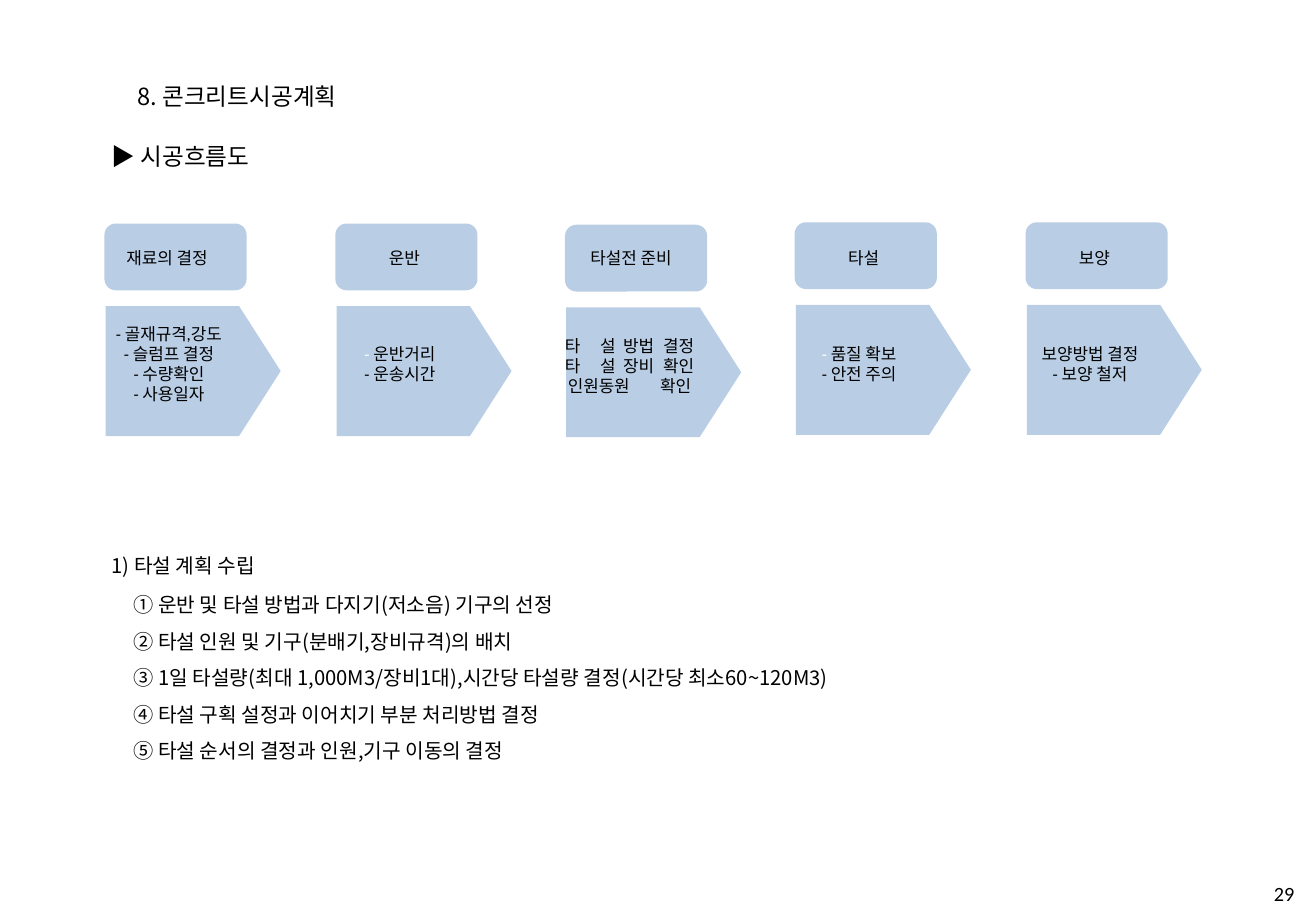
from lxml.etree import SubElement
from pptx import Presentation
from pptx.dml.color import RGBColor
from pptx.enum.shapes import MSO_SHAPE
from pptx.enum.text import MSO_ANCHOR, MSO_AUTO_SIZE, PP_ALIGN
from pptx.oxml.ns import qn
from pptx.util import Emu, Pt

PX = 9144  # 100 px to the inch
BLACK = RGBColor(0x00, 0x00, 0x00)
WHITE = RGBColor(0xFF, 0xFF, 0xFF)
PALE_BLUE = RGBColor(0xB9, 0xCD, 0xE5)
LATIN, KOREAN = "Calibri", "Noto Sans CJK KR"


def add_run(paragraph, text, size, font=LATIN, color=BLACK):
    run = paragraph.add_run()
    run.text = text
    run.font.size = Pt(size)
    run.font.color.rgb = color
    run.font.name = font
    SubElement(run.font._element, qn("a:ea"), typeface=KOREAN)


def add_frame(left, top, width, height, inset=True):
    frame = slide.shapes.add_textbox(*(Emu(v * PX) for v in (left, top, width, height))).text_frame
    frame.word_wrap = False
    if not inset:
        frame.margin_left = frame.margin_top = frame.margin_right = frame.margin_bottom = 0
    return frame


presentation = Presentation()
presentation.slide_width, presentation.slide_height = Emu(1083 * PX), Emu(750 * PX)
slide = presentation.slides.add_slide(presentation.slide_layouts[5])

# Title
title = slide.shapes.title
title.left, title.top, title.width, title.height = (Emu(v * PX) for v in (103, 62, 198, 34))
title.text_frame.word_wrap = False
title.text_frame.auto_size = MSO_AUTO_SIZE.SHAPE_TO_FIT_TEXT
title.text_frame.vertical_anchor = MSO_ANCHOR.TOP
heading = title.text_frame.paragraphs[0]
heading.alignment = PP_ALIGN.LEFT
add_run(heading, "8. 콘크리트시공계획", 14, KOREAN)

# Flow steps: name, name indent, arrow top, first dash colour, line pitches, details
steps = [
    ("재료의 결정", 22, 252, BLACK, (11.8, 11.8, 12, 12),
     ("- 골재규격,강도", "- 슬럼프 결정", "- 수량확인", "- 사용일자")),
    ("운반", 48, 252, WHITE, (11.8, 12), ("- 운반거리", "- 운송시간")),
    ("타설전 준비", 25, 253, BLACK, (17.8, 12, 12),
     ("타 \t설 \t방법 \t결정", "타 \t설 \t장비 \t확인", "인원동원 \t확인")),
    ("타설", 48, 251, WHITE, (11.8, 12), ("- 품질 확보", "- 안전 주의")),
    ("보양", 48, 251, BLACK, (11.8, 12), ("보양방법 결정", "- 보양 철저")),
]
TAB_STOPS = {1: (76,), 3: (29, 48, 81)}  # by number of tabs in a line

for column, (name, indent, arrow_top, dash_color, pitches, details) in enumerate(steps):
    left = 87 + round(column * 189.5)

    # Arrow and name plate
    for preset, x, y, width, height, adjustment in (
        (MSO_SHAPE.PENTAGON, left, arrow_top, 144, 107, 0.32),
        (MSO_SHAPE.ROUNDED_RECTANGLE, left - 1, arrow_top - 68, 117, 55, 0.17),
    ):
        plate = slide.shapes.add_shape(preset, *(Emu(v * PX) for v in (x, y, width, height)))
        plate.adjustments[0] = adjustment
        plate.shadow.inherit = False
        plate.fill.solid()
        plate.fill.fore_color.rgb = PALE_BLUE
        plate.line.fill.background()

    # Step name
    label = add_frame(left - 5, 192, 126, 42, inset=False).paragraphs[0]
    label.line_spacing = Pt(20.8)
    label._p.get_or_add_pPr().set("indent", str(indent * PX))
    add_run(label, name, 10)

    # Step details
    detail_frame = add_frame(left - 29, 233, 162, 133, inset=False)
    detail_frame.vertical_anchor = MSO_ANCHOR.MIDDLE
    for row, (detail, pitch) in enumerate(zip(details, pitches)):
        line = detail_frame.add_paragraph() if row else detail_frame.paragraphs[0]
        line.alignment = PP_ALIGN.CENTER
        line.line_spacing = Pt(pitch)
        words = detail.split("\t")
        if len(words) > 1:
            tab_list = SubElement(line._p.get_or_add_pPr(), qn("a:tabLst"))
            for stop in TAB_STOPS[len(words) - 1]:
                SubElement(tab_list, qn("a:tab"), pos=str(stop * PX), algn="l")
        if row == 0 and dash_color == WHITE:
            add_run(line, "- ", 10, color=dash_color)
            words = [detail.removeprefix("- ")]
        for position, word in enumerate(words):
            if position:
                add_run(line, "\t", 18)
            add_run(line, word, 10)

# Subheading and placing plan
plan = [
    "① 운반 및 타설 방법과 다지기(저소음) 기구의 선정",
    "② 타설 인원 및 기구(분배기,장비규격)의 배치",
    "③ 1일 타설량(최대 1,000M3/장비1대),시간당 타설량 결정(시간당 최소60~120M3)",
    "④ 타설 구획 설정과 이어치기 부분 처리방법 결정",
    "⑤ 타설 순서의 결정과 인원,기구 이동의 결정",
]
plan_widths = (433, 390, 651, 416, 382)
text_lines = [("▶ 시공흐름도", 82, 112, 148, 34, 14), ("1) 타설 계획 수립", 82, 451, 163, 30, 12)]
text_lines += [(item, 100, 483 + 30 * i, width, 30, 12)
               for i, (item, width) in enumerate(zip(plan, plan_widths))]
for text, left, top, width, height, size in text_lines:
    frame = add_frame(left, top, width, height)
    frame.auto_size = MSO_AUTO_SIZE.SHAPE_TO_FIT_TEXT
    add_run(frame.paragraphs[0], text, size, KOREAN)

# Page number
page_frame = add_frame(885, 701, 190, 58)
page_frame.word_wrap = True
page_number = page_frame.paragraphs[0]
page_number.alignment = PP_ALIGN.RIGHT
page_number.line_spacing = 2.0
add_run(page_number, "29", 12)

presentation.save("out.pptx")
